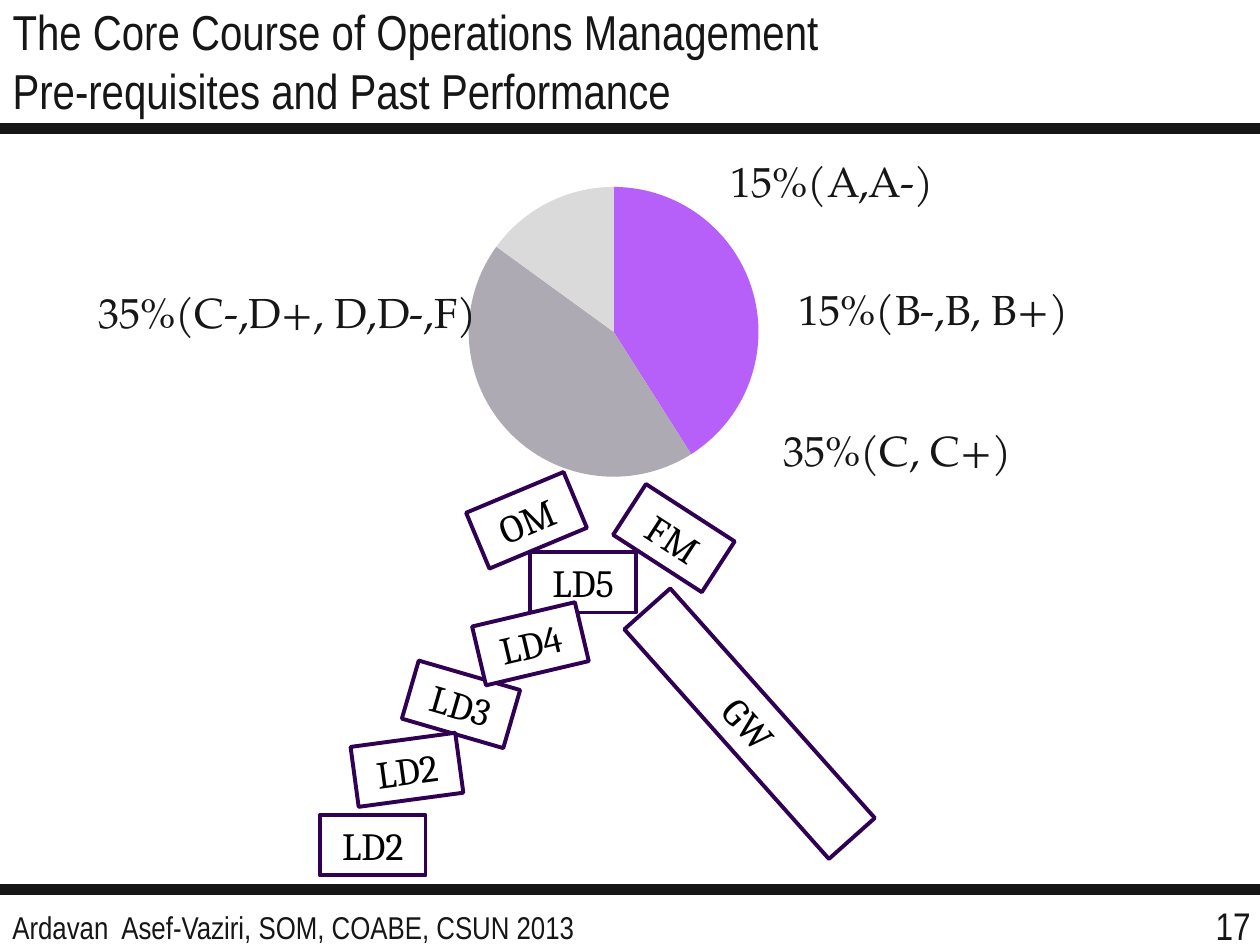
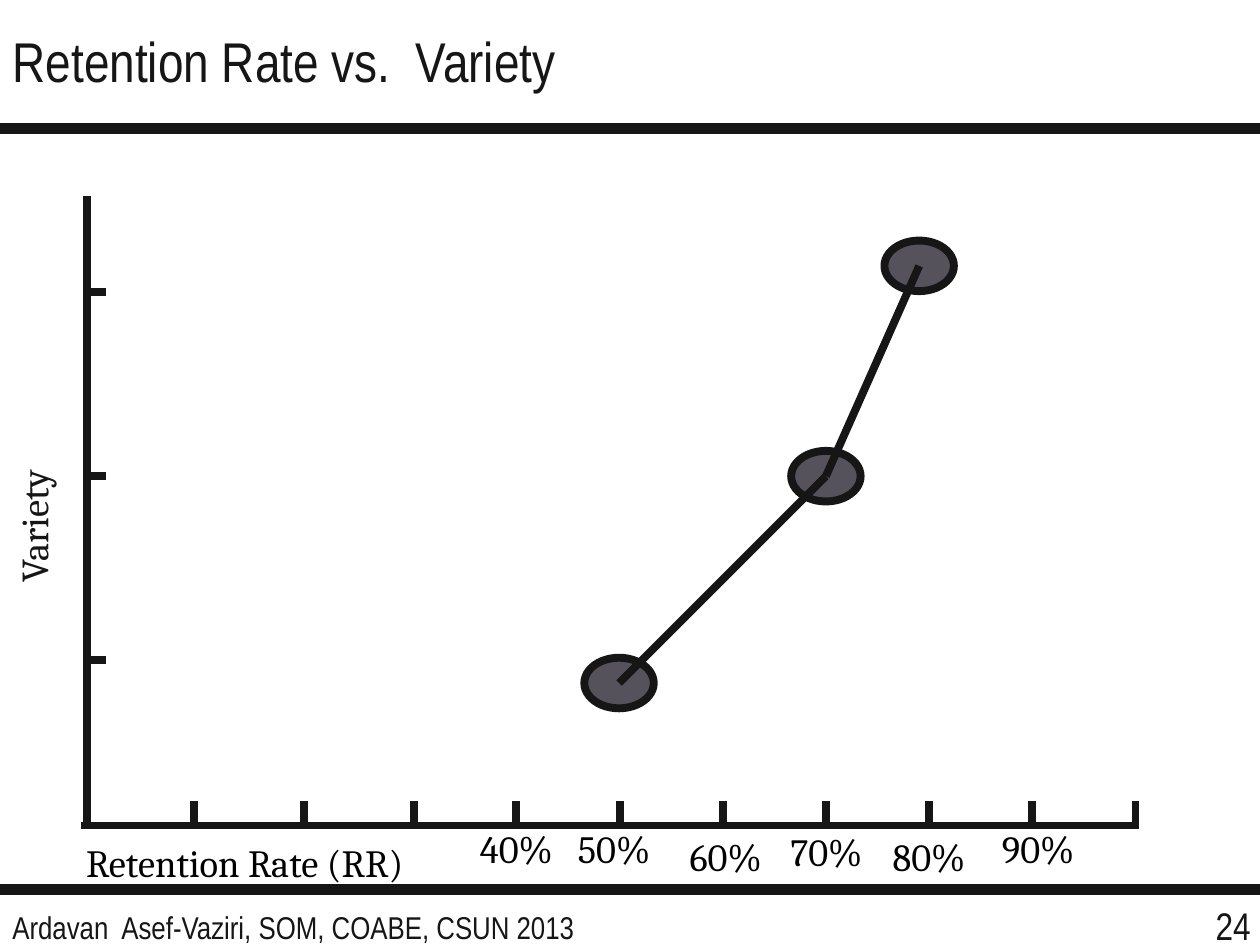
import itertools
import pptx
import pptx.chart.data
import pptx.dml.color
import pptx.enum.chart
import pptx.enum.shapes
import pptx.enum.text
import pptx.oxml
import pptx.oxml.ns
import pptx.util
from pptx.util import Cm, Pt

INK, BLACK, WHITE, FRAME, DOT = "161616", "000000", "FFFFFF", "300153", "56525C"
NARROW, SERIF, PAGELLA = "Arial Narrow", "Cambria", "TeX Gyre Pagella"
SHAPE = pptx.enum.shapes.MSO_SHAPE
ALIGN = pptx.enum.text.PP_ALIGN
ANCHOR = pptx.enum.text.MSO_ANCHOR

WIDTH, HEIGHT = 25.4, 19.05
BAND_YS = (2.59, 17.93)
FOOTER = "Ardavan  Asef-Vaziri, SOM, COABE, CSUN 2013"

PERFORMANCE_TITLE = ["The Core Course of Operations Management",
                     "Pre-requisites and Past Performance"]
GRADE_SHARES = [("1", 0, "618FFD"), ("2", 41, "B760F9"),
                ("3", 44, "ADAAB3"), ("4", 15, "DADADA")]
PIE_BOX = (6.02, 2.92, 12.7, 7.62)
PIE_LAYOUT = {"x": 0.27, "y": 0.11, "w": 0.46, "h": 0.77}
GRADE_LABELS = [
    ("15%(A,A-)", 14.48, 3.02, 5.21),
    ("15%(B-,B, B+)", 15.85, 5.59, 6.78),
    ("35%(C, C+)", 15.54, 8.43, 6.78),
    ("35%(C-,D+, D,D-,F)", 1.73, 5.66, 9.8),
]
BRICK_SIZE, LONG_BRICK_SIZE = (2.13, 1.22), (6.2, 1.24)
BRICKS = [
    ("LD3", 8.23, 13.59, 16.2, BRICK_SIZE),
    ("LD2", 7.14, 14.91, 352.3, BRICK_SIZE),
    ("LD5", 10.69, 11.13, 0, BRICK_SIZE),
    ("LD4", 9.63, 12.37, 346.7, BRICK_SIZE),
    ("GW", 12.01, 13.97, 48.3, LONG_BRICK_SIZE),
    ("FM", 12.52, 10.24, 32.9, BRICK_SIZE),
    ("OM", 9.55, 9.88, 337.3, BRICK_SIZE),
    ("LD2", 6.45, 16.43, 0, BRICK_SIZE),
]

RETENTION_TITLE = ["Retention Rate vs.  Variety"]
AXIS_X, AXIS_Y = 1.75, 16.64
VARIETY_TICKS = [5.89 + 3.71 * i for i in range(3)]
RATE_TICKS = ([3.91 + 2.22 * i for i in range(3)]
              + [10.41 + 2.08 * i for i in range(7)])
RATE_LABELS = [("40%", 10.41, 16.51), ("50%", 12.38, 16.51),
               ("60%", 14.63, 16.66), ("70%", 16.66, 16.56),
               ("80%", 18.73, 16.66), ("90%", 20.93, 16.51)]
POINTS = [(12.48, 13.77), (16.65, 9.6), (18.53, 5.36)]
POINT_W, POINT_H = 1.4, 1.02


def rgb(value):
    return pptx.dml.color.RGBColor.from_string(value)


def add_run(p, text, size, font, color):
    r = p.add_run()
    r.text = text
    r.font.size = Pt(size)
    r.font.name = font
    r.font.color.rgb = rgb(color)


def add_text(s, text, box, size, font, color, align=ALIGN.LEFT, wrap=False):
    sp = s.shapes.add_textbox(*map(Cm, box))
    tf = sp.text_frame
    tf.word_wrap = wrap
    p = tf.paragraphs[0]
    p.alignment = align
    add_run(p, text, size, font, color)
    return sp


def add_line(s, start, end, width):
    line = s.shapes.add_connector(pptx.enum.shapes.MSO_CONNECTOR.STRAIGHT,
                                  *map(Cm, (*start, *end)))
    line.line.color.rgb = rgb(INK)
    line.line.width = Pt(width)
    line._element.spPr.append(pptx.oxml.parse_xml(
        f"<a:effectLst {pptx.oxml.ns.nsdecls('a')}/>"))


def add_filled(s, kind, box, fill, outline, width):
    sp = s.shapes.add_shape(kind, *map(Cm, box))
    sp.shadow.inherit = False
    sp.fill.solid()
    sp.fill.fore_color.rgb = rgb(fill)
    sp.line.color.rgb = rgb(outline)
    sp.line.width = Pt(width)
    return sp


def add_slide(prs, title_lines, title_size, number):
    s = prs.slides.add_slide(prs.slide_layouts[5])
    title = s.shapes.title
    title.left, title.top, title.width, title.height = map(Cm, (0, 0, 25.3, 2.44))
    tf = title.text_frame
    tf.auto_size = pptx.enum.text.MSO_AUTO_SIZE.NONE
    tf.vertical_anchor = ANCHOR.MIDDLE
    p = tf.paragraphs[0]
    p.alignment = ALIGN.LEFT
    for i, text in enumerate(title_lines):
        if i:
            p.add_line_break()
        add_run(p, text, title_size, NARROW, INK)
    add_text(s, FOOTER, (0, 18.19, 13, 1.02), 18, NARROW, INK, wrap=True)
    add_text(s, number, (24.2, 18.06, 1.32, 1.19), 22, NARROW, INK, ALIGN.CENTER)
    for y in BAND_YS:
        add_line(s, (0, y), (WIDTH, y), 6)
    return s


def add_grade_pie(s):
    data = pptx.chart.data.CategoryChartData()
    data.categories = [name for name, _, _ in GRADE_SHARES]
    data.add_series("Series 1", [share for _, share, _ in GRADE_SHARES])
    chart = s.shapes.add_chart(pptx.enum.chart.XL_CHART_TYPE.PIE,
                               *map(Cm, PIE_BOX), data).chart
    chart.has_legend = False
    chart.has_title = False
    chart.font.size = Pt(10)
    chart.font.name = PAGELLA
    chart.font.color.rgb = rgb(WHITE)
    plot = chart.plots[0]
    plot.vary_by_categories = True
    for i, (_, _, color) in enumerate(GRADE_SHARES):
        fmt = plot.series[0].points[i].format
        fmt.fill.solid()
        fmt.fill.fore_color.rgb = rgb(color)
        fmt.line.fill.background()
    area = chart._chartSpace.chart.plotArea
    for old in area.findall(pptx.oxml.ns.qn("c:layout")):
        area.remove(old)
    modes = "".join(f'<c:{k}Mode val="edge"/>' for k in "xy")
    values = "".join(f'<c:{k} val="{v}"/>' for k, v in PIE_LAYOUT.items())
    area.insert(0, pptx.oxml.parse_xml(
        f"<c:layout {pptx.oxml.ns.nsdecls('c')}><c:manualLayout>"
        f'<c:layoutTarget val="inner"/>{modes}{values}'
        "</c:manualLayout></c:layout>"))


def add_brick(s, name, left, top, angle, size):
    sp = add_filled(s, SHAPE.RECTANGLE, (left, top, *size), WHITE, FRAME, 2.25)
    sp.rotation = angle
    tf = sp.text_frame
    tf.word_wrap = False
    tf.vertical_anchor = ANCHOR.MIDDLE
    p = tf.paragraphs[0]
    p.alignment = ALIGN.CENTER
    add_run(p, name, 22, SERIF, BLACK)


def build_performance(prs):
    s = add_slide(prs, PERFORMANCE_TITLE, 28, "17")
    add_grade_pie(s)
    for text, left, top, width in GRADE_LABELS:
        add_text(s, text, (left, top, width, 1.19), 24, PAGELLA, INK, wrap=True)
    for brick in BRICKS:
        add_brick(s, *brick)


def build_retention(prs):
    s = add_slide(prs, RETENTION_TITLE, 32, "24")
    variety = add_text(s, "Variety", (-0.84, 10.01, 3.02, 1.19), 22, SERIF, INK,
                       ALIGN.CENTER)
    variety.rotation = 270
    add_text(s, "Retention Rate (RR)", (1.14, 16.79, 7.59, 1.19), 22, SERIF,
             BLACK, ALIGN.CENTER)
    add_line(s, (AXIS_X, 3.96), (AXIS_X, 16.66), 4.5)
    add_line(s, (1.63, AXIS_Y), (22.91, AXIS_Y), 4.5)
    for y in VARIETY_TICKS:
        add_line(s, (AXIS_X, y), (AXIS_X + 0.38, y), 4.5)
    for x in RATE_TICKS:
        add_line(s, (x, 16.15), (x, 16.71), 4.5)
    for x, y in POINTS:
        add_filled(s, SHAPE.OVAL, (x - POINT_W / 2, y - POINT_H / 2, POINT_W, POINT_H),
                   DOT, INK, 4.5)
    for start, end in itertools.pairwise(POINTS):
        add_line(s, start, end, 4.5)
    for text, center, top in RATE_LABELS:
        add_text(s, text, (center - 1.04, top, 2.08, 1.19), 22, SERIF, BLACK,
                 ALIGN.CENTER)


def main():
    prs = pptx.Presentation()
    prs.slide_width, prs.slide_height = Cm(WIDTH), Cm(HEIGHT)
    build_performance(prs)
    build_retention(prs)
    prs.save("out.pptx")


if __name__ == "__main__":
    main()
